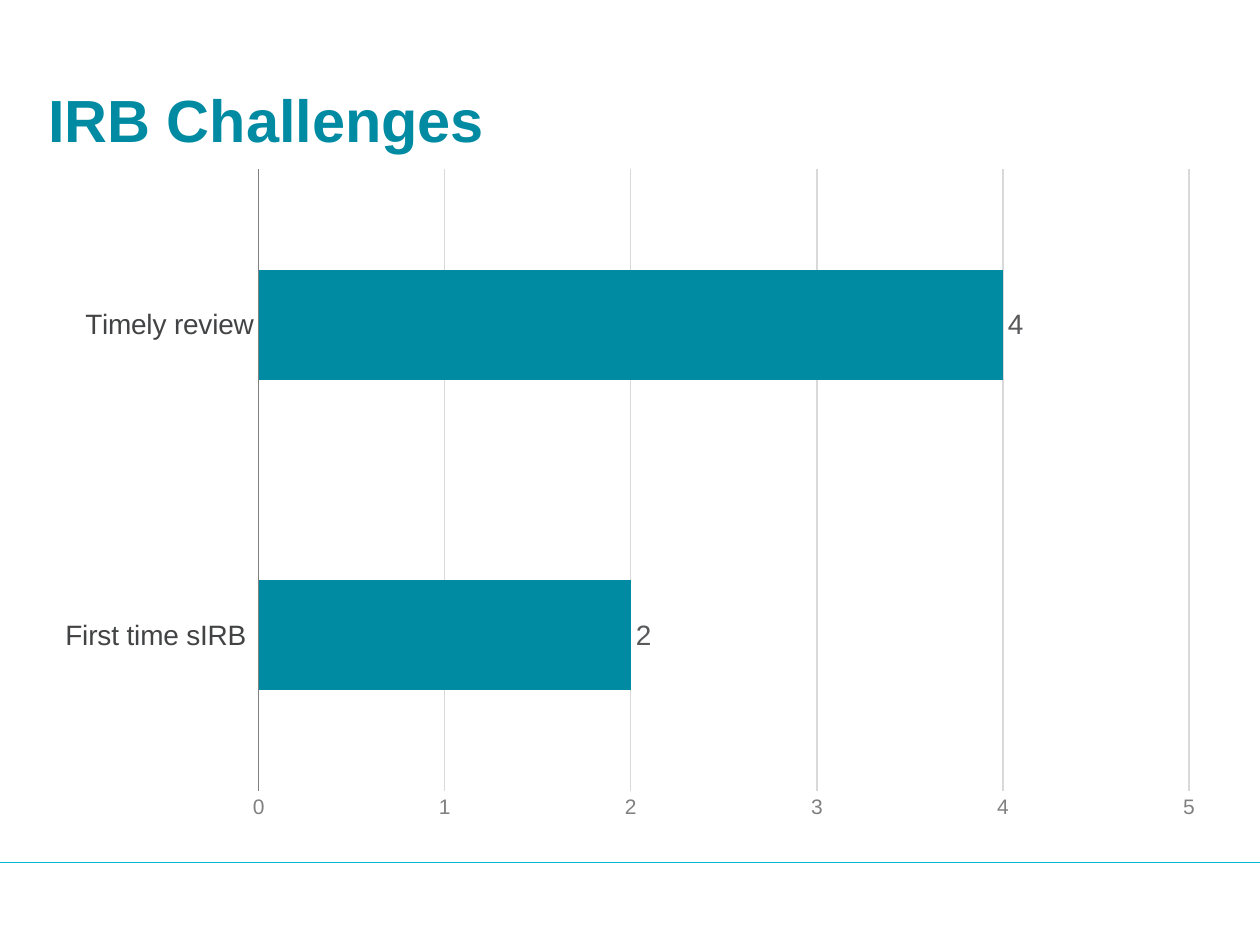
import pptx
import pptx.chart.data
import pptx.dml.color
import pptx.enum.chart
import pptx.enum.shapes
import pptx.enum.text
import pptx.oxml
import pptx.oxml.ns
import pptx.util

Pt = pptx.util.Pt
RGB = pptx.dml.color.RGBColor
TEAL = RGB(0x00, 0x8B, 0xA2)
CYAN = RGB(0x00, 0xB7, 0xD5)
DEEP = RGB(0x00, 0x68, 0x79)
DARK = RGB(0x42, 0x43, 0x44)
SLATE = RGB(0x58, 0x59, 0x5B)
GRAY = RGB(0x80, 0x80, 0x80)
PALE = RGB(0xD9, 0xD9, 0xD9)
WHITE = RGB(0xFF, 0xFF, 0xFF)


def apply(item, values):
    """Set each named attribute on the item."""
    for name, value in values.items():
        setattr(item, name, value)


class Deck:
    """Hold the style and the current slide."""

    face = "Arial"
    rule = Pt(0.75)

    def __init__(self, width, height):
        """Open a deck with one blank slide."""
        self.deck = pptx.Presentation()
        apply(self.deck, {"slide_width": Pt(width), "slide_height": Pt(height)})
        self.slide = self.deck.slides.add_slide(self.deck.slide_layouts[6])

    def font(self, font, size, color, bold=False):
        """Style a font."""
        apply(font, {"name": self.face, "size": Pt(size), "bold": bold})
        font.color.rgb = color

    def stroke(self, line, color):
        """Style a thin line."""
        line.color.rgb = color
        line.width = self.rule

    def band(self, box, color):
        """Add a plain filled rectangle."""
        kind = pptx.enum.shapes.MSO_SHAPE.RECTANGLE
        shape = self.slide.shapes.add_shape(kind, *map(Pt, box))
        shape.shadow.inherit = False
        shape.fill.solid()
        shape.fill.fore_color.rgb = color
        shape.line.fill.background()

    def line(self, ends, color):
        """Add a straight line."""
        kind = pptx.enum.shapes.MSO_CONNECTOR.STRAIGHT
        line = self.slide.shapes.add_connector(kind, *map(Pt, ends))
        self.stroke(line.line, color)
        tag = pptx.oxml.ns.qn("a:effectLst")
        line._element.spPr.append(line._element.spPr.makeelement(tag, {}))

    def title(self, box, text):
        """Add the slide title."""
        frame = self.slide.shapes.add_textbox(*map(Pt, box)).text_frame
        apply(frame, {
            "word_wrap": True,
            "vertical_anchor": pptx.enum.text.MSO_ANCHOR.MIDDLE,
            "margin_left": 0, "margin_top": 0,
            "margin_right": 0, "margin_bottom": 0,
        })
        run = frame.paragraphs[0].add_run()
        run.text = text
        self.font(run.font, 34, TEAL, True)

    def bars(self, box, plot, points):
        """Add a bar chart whose inner plot fills the given shares."""
        enum = pptx.enum.chart
        data = pptx.chart.data.CategoryChartData(number_format="0")
        data.categories = list(points)
        data.add_series("Series 1", list(points.values()))
        kind = enum.XL_CHART_TYPE.BAR_CLUSTERED
        chart = self.slide.shapes.add_chart(kind, *map(Pt, box), data).chart
        apply(chart, {"has_legend": False, "has_title": False})
        self.font(chart.font, 10, DEEP)

        group = chart.plots[0]
        apply(group, {"gap_width": 182, "vary_by_categories": False,
                      "has_data_labels": True})
        fill = group.series[0].format.fill
        fill.solid()
        fill.fore_color.rgb = TEAL
        apply(group.data_labels, {
            "show_value": True,
            "position": enum.XL_LABEL_POSITION.OUTSIDE_END,
        })
        self.font(group.data_labels.font, 16, SLATE)

        names, scale = chart.category_axis, chart.value_axis
        for axis, size, color in ((names, 16, DARK), (scale, 12, GRAY)):
            apply(axis, {"major_tick_mark": enum.XL_TICK_MARK.NONE,
                         "minor_tick_mark": enum.XL_TICK_MARK.NONE})
            self.font(axis.tick_labels.font, size, color)
        names.has_major_gridlines = False
        self.stroke(names.format.line, GRAY)
        apply(scale, {"minimum_scale": 0, "maximum_scale": 5,
                      "major_unit": 1, "has_major_gridlines": True})
        scale.format.line.fill.background()
        self.stroke(scale.major_gridlines.format.line, PALE)
        self.place(chart, plot)

    def place(self, chart, plot):
        """Fix the inner plot area of a chart."""
        area = chart._chartSpace.chart.plotArea
        for old in area.findall(pptx.oxml.ns.qn("c:layout")):
            area.remove(old)
        parts = [("layoutTarget", "inner"), ("xMode", "edge"), ("yMode", "edge")]
        parts += zip("xywh", plot)
        body = "".join(f'<c:{name} val="{value}"/>' for name, value in parts)
        space = pptx.oxml.ns.nsdecls("c")
        area.insert(0, pptx.oxml.parse_xml(
            f"<c:layout {space}><c:manualLayout>{body}</c:manualLayout></c:layout>"))


def main():
    """Build the slide."""
    deck = Deck(720, 540)
    deck.band((0, 492, 720, 48), WHITE)
    deck.line((0, 493, 720, 493), CYAN)
    deck.bars((24, 89.5, 673, 386), (0.184, 0.019, 0.79, 0.92),
              {"First time sIRB ": 2, "Timely review": 4})
    deck.title((27.5, 37.5, 666, 60.5), "IRB Challenges")
    deck.deck.save("out.pptx")


if __name__ == "__main__":
    main()
